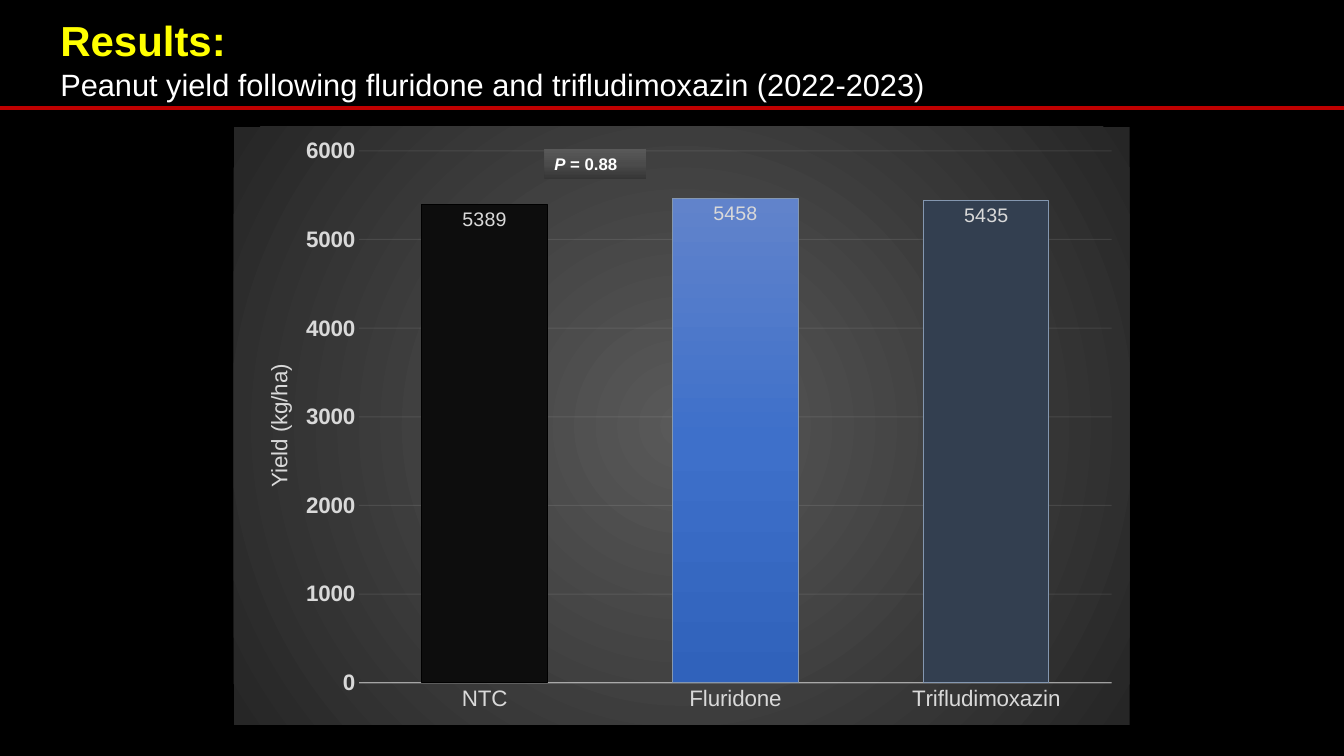
"""Build the peanut yield results slide."""
from pptx import Presentation
from pptx.chart.data import CategoryChartData
from pptx.dml.color import RGBColor
from pptx.enum.chart import XL_CHART_TYPE, XL_LABEL_POSITION, XL_TICK_MARK
from pptx.enum.shapes import MSO_CONNECTOR, MSO_SHAPE
from pptx.enum.text import MSO_ANCHOR, PP_ALIGN
from pptx.oxml import parse_xml
from pptx.oxml.ns import nsdecls, qn
from pptx.util import Cm, Pt

COLUMNS = XL_CHART_TYPE.COLUMN_CLUSTERED
INSIDE_END = XL_LABEL_POSITION.INSIDE_END
NO_TICKS = XL_TICK_MARK.NONE
STRAIGHT = MSO_CONNECTOR.STRAIGHT
RECTANGLE = MSO_SHAPE.RECTANGLE
MIDDLE = MSO_ANCHOR.MIDDLE
LEFT = PP_ALIGN.LEFT
FONT = "Arial"
LIGHT_GREY = "D9D9D9"
DOWNWARD = '<a:lin ang="5400000" scaled="0"/>'
UPWARD = '<a:lin ang="16200000" scaled="0"/>'
RADIAL = ('<a:path path="circle"><a:fillToRect l="50000" t="50000" '
          'r="50000" b="50000"/></a:path>')


def color(value):
    return RGBColor.from_string(value)


def gradient(colors, direction):
    step = 100000 // (len(colors) - 1)
    stops = "".join(f'<a:gs pos="{index * step}"><a:srgbClr val="{value}"/></a:gs>'
                    for index, value in enumerate(colors))
    return parse_xml(f'<a:gradFill {nsdecls("a")} rotWithShape="1">'
                     f'<a:gsLst>{stops}</a:gsLst>{direction}</a:gradFill>')


presentation = Presentation()
presentation.slide_width = Cm(33.87)
presentation.slide_height = Cm(19.05)
slide = presentation.slides.add_slide(presentation.slide_layouts[6])
slide.background.fill.solid()
slide.background.fill.fore_color.rgb = color("000000")

heading = slide.shapes.add_textbox(0, 0, Cm(33.87), Cm(2.95)).text_frame
heading.word_wrap = True
heading.vertical_anchor = MIDDLE
heading.margin_left = Cm(1.52)
heading.text = ("Results:\n"
                "Peanut yield following fluridone and trifludimoxazin (2022-2023)")
heading_styles = [(30, "FFFF00", True), (22, "FFFFFF", False)]
for paragraph, (size, value, bold) in zip(heading.paragraphs, heading_styles):
    paragraph.font.name = FONT
    paragraph.font.size = Pt(size)
    paragraph.font.bold = bold
    paragraph.font.color.rgb = color(value)

chart_data = CategoryChartData(number_format="0")
chart_data.categories = ["NTC", "Fluridone", "Trifludimoxazin"]
chart_data.add_series("Series 1", [5389, 5458, 5435])
chart = slide.shapes.add_chart(COLUMNS, Cm(5.89), Cm(3.2), Cm(22.58), Cm(15.06),
                               chart_data).chart
chart.has_legend = False
chart.has_title = False
chart.font.name = FONT
chart.font.size = Pt(14)
chart.font.color.rgb = color(LIGHT_GREY)
chart_fill = parse_xml(f'<c:spPr {nsdecls("c", "a")}/>')
chart_fill.append(gradient(["595959", "262626"], RADIAL))
chart.element.find(qn("c:chart")).addnext(chart_fill)

category_axis, value_axis = chart.category_axis, chart.value_axis
for axis in (category_axis, value_axis):
    axis.major_tick_mark = NO_TICKS
    axis.minor_tick_mark = NO_TICKS
    axis.tick_labels.font.name = FONT
    axis.tick_labels.font.size = Pt(16)
    axis.tick_labels.font.color.rgb = color(LIGHT_GREY)
value_axis.tick_labels.font.bold = True
value_axis.tick_labels.number_format = "0"
value_axis.tick_labels.number_format_is_linked = False
value_axis.minimum_scale = 0
value_axis.maximum_scale = 6000
value_axis.major_unit = 1000
value_axis.format.line.fill.background()
axis_title = value_axis.axis_title
axis_title.text_frame.text = "Yield (kg/ha)"
title_font = axis_title.text_frame.paragraphs[0].font
title_font.name = FONT
title_font.size = Pt(16)
title_font.bold = False
title_font.color.rgb = color(LIGHT_GREY)

axis_lines = [(category_axis, category_axis.format.line, 1, 54),
              (value_axis, value_axis.major_gridlines.format.line, 0.75, 10)]
for axis, line, width, opacity in axis_lines:
    line.width = Pt(width)
    line.color.rgb = color("F2F2F2")
    for line_color in axis._element.xpath(".//a:ln//a:srgbClr"):
        line_color.append(parse_xml(
            f'<a:alpha {nsdecls("a")} val="{opacity * 1000}"/>'))

plot_area = chart.element.find(".//" + qn("c:plotArea"))
layouts = [(plot_area, 0, '<c:layoutTarget val="inner"/>',
            {"x": 0.14, "y": 0.04, "w": 0.84, "h": 0.89}),
           (axis_title._element, 1, "", {"x": 0.03, "y": 0.39})]
for parent, position, target, place in layouts:
    for automatic in parent.findall(qn("c:layout")):
        parent.remove(automatic)
    modes = "".join(f'<c:{key}Mode val="edge"/>' for key in "xy")
    values = "".join(f'<c:{key} val="{value}"/>' for key, value in place.items())
    parent.insert(position, parse_xml(
        f'<c:layout {nsdecls("c")}><c:manualLayout>{target}{modes}{values}'
        '</c:manualLayout></c:layout>'))

plot = chart.plots[0]
plot.gap_width = 100
plot.overlap = -24
plot.vary_by_categories = False
series = plot.series[0]
bar_styles = [("0D0D0D", "000000"), (None, "8497B0"), ("333F50", "8497B0")]
for index, (fill_value, line_value) in enumerate(bar_styles):
    bar = series.points[index].format
    bar.line.width = Pt(0.75)
    bar.line.color.rgb = color(line_value)
    if fill_value:
        bar.fill.solid()
        bar.fill.fore_color.rgb = color(fill_value)
    else:
        bar.fill.gradient()
        default_fill = series._element.find(".//" + qn("a:gradFill"))
        default_fill.getparent().replace(
            default_fill, gradient(["6183CB", "3E70CA", "3062BB"], DOWNWARD))

labels = series.data_labels
labels.show_value = True
labels.position = INSIDE_END
labels.number_format = "0"
labels.number_format_is_linked = False
labels.font.name = FONT
labels.font.size = Pt(14)
labels.font.bold = False
labels.font.color.rgb = color(LIGHT_GREY)

rule = slide.shapes.add_connector(STRAIGHT, 0, Cm(2.72), Cm(33.87), Cm(2.72))
rule.line.width = Pt(3)
rule.line.color.rgb = color("C00000")
rule._element.spPr.append(parse_xml(f'<a:effectLst {nsdecls("a")}/>'))

p_value = slide.shapes.add_shape(RECTANGLE, Cm(13.72), Cm(3.76), Cm(2.57), Cm(0.76))
p_value.shadow.inherit = False
p_value.line.fill.background()
p_value.fill.gradient()
default_fill = p_value._element.spPr.find(qn("a:gradFill"))
default_fill.getparent().replace(
    default_fill, gradient(["353535", "4B4B4B", "595959"], UPWARD))
p_value.text_frame.vertical_anchor = MIDDLE
paragraph = p_value.text_frame.paragraphs[0]
paragraph.alignment = LEFT
for text, italic in [("P", True), (" = 0.88", False)]:
    run = paragraph.add_run()
    run.text = text
    run.font.italic = italic
paragraph.font.name = FONT
paragraph.font.size = Pt(12)
paragraph.font.bold = True
paragraph.font.color.rgb = color("FFFFFF")

presentation.save("out.pptx")
